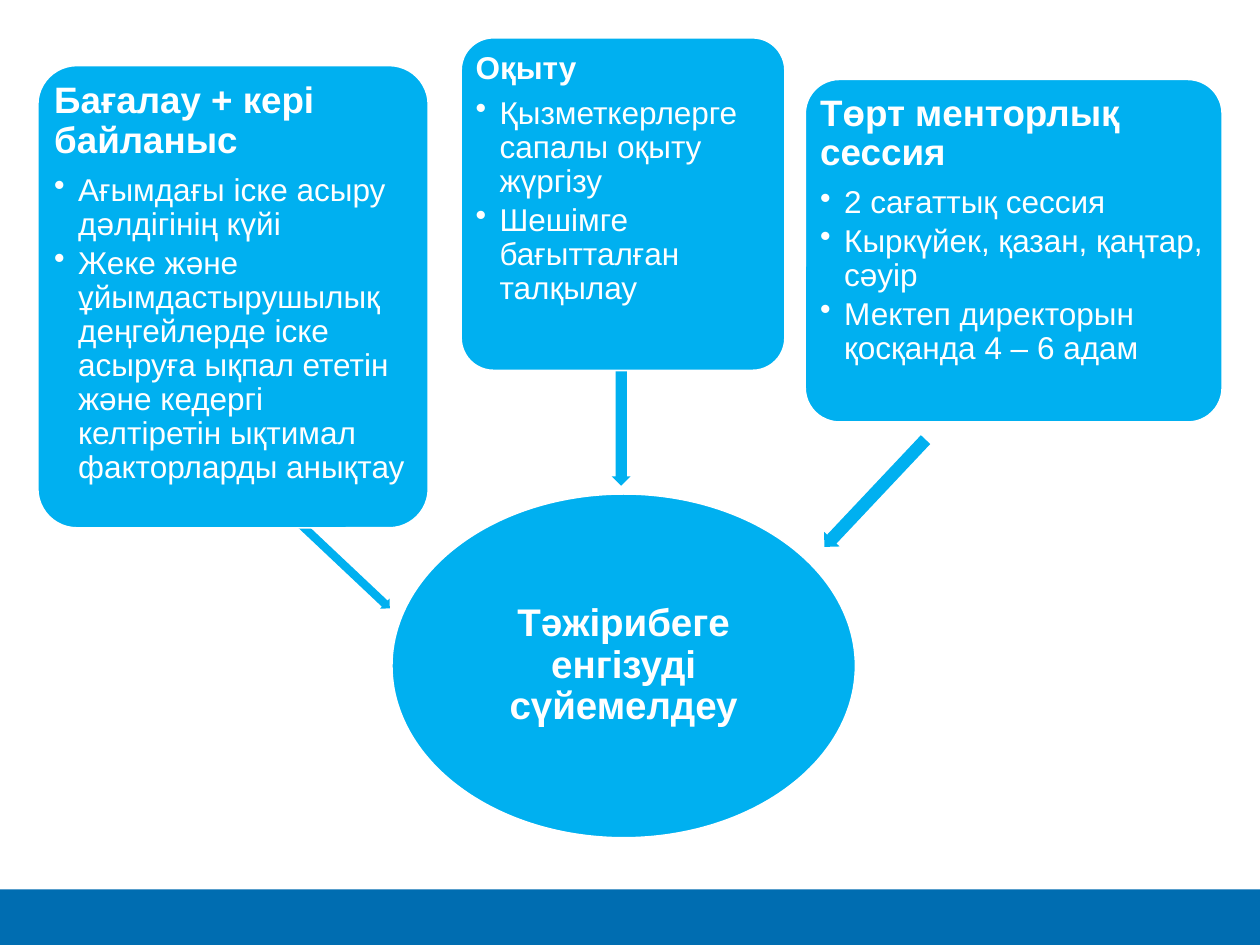
from typing import NamedTuple

from lxml.etree import SubElement
from pptx import Presentation
from pptx.dml.color import RGBColor
from pptx.enum.shapes import MSO_SHAPE
from pptx.enum.text import MSO_ANCHOR, PP_ALIGN
from pptx.oxml.ns import qn
from pptx.util import Inches, Pt

SKY = "00B0F0"
NAVY = "006DB1"
WHITE = "FFFFFF"
BULLET_SIZE = 18
BULLET_INDENT = Inches(0.19)


class Box(NamedTuple):
    left: float
    top: float
    width: float
    height: float


class Card(NamedTuple):
    box: Box
    heading: str
    heading_size: int
    bullets: list[str]


class Arrow(NamedTuple):
    box: Box
    rotation: float


CARDS = [
    Card(Box(0.3, 0.52, 3.1, 3.67), "Бағалау + кері байланыс", 21, [
        "Ағымдағы іске асыру дәлдігінің күйі",
        "Жеке және ұйымдастырушылық деңгейлерде іске асыруға ықпал ететін "
        "және кедергі келтіретін ықтимал факторларды анықтау",
    ]),
    Card(Box(3.66, 0.3, 2.57, 2.64), "Оқыту", 18, [
        "Қызметкерлерге сапалы оқыту жүргізу",
        "Шешімге бағытталған талқылау",
    ]),
    Card(Box(6.39, 0.63, 3.31, 2.72), "Төрт менторлық сессия", 21, [
        "2 сағаттық сессия",
        "Кыркүйек, қазан, қаңтар, сәуір",
        "Мектеп директорын қосқанда 4 – 6 адам",
    ]),
]
ARROWS = [
    Arrow(Box(2.23, 4.43, 1, 0.11), 223.3),
    Arrow(Box(4.32, 3.17, 1.22, 0.15), 270),
    Arrow(Box(6.36, 3.83, 1.17, 0.17), 313.3),
]


def color(value: str) -> RGBColor:
    return RGBColor.from_string(value)


def add_filled_shape(slide, kind, box: Box, fill: str, outline: str | None = None):
    shape = slide.shapes.add_shape(kind, *(Inches(length) for length in box))
    shape.shadow.inherit = False
    shape.fill.solid()
    shape.fill.fore_color.rgb = color(fill)
    if outline:
        shape.line.color.rgb = color(outline)
        shape.line.width = Pt(1)
    else:
        shape.line.fill.background()
    return shape


def set_up_frame(shape, margin: float, anchor):
    frame = shape.text_frame
    frame.word_wrap = True
    frame.vertical_anchor = anchor
    frame.margin_left = frame.margin_right = Inches(margin)
    frame.margin_top = frame.margin_bottom = Inches(margin)
    return frame


def format_paragraph(paragraph, size: int, bold: bool, space_share: float,
                     alignment=PP_ALIGN.LEFT) -> None:
    """Space after the paragraph is a share of its font size."""
    paragraph.alignment = alignment
    paragraph.line_spacing = 0.9
    paragraph.space_after = Pt(round(size * space_share, 1))
    for run in paragraph.runs:
        run.font.name = "Arial"
        run.font.size = Pt(size)
        run.font.bold = bold
        run.font.color.rgb = color(WHITE)


def add_bullet(paragraph) -> None:
    properties = paragraph._p.get_or_add_pPr()
    properties.set("marL", str(BULLET_INDENT))
    properties.set("indent", str(-BULLET_INDENT))
    SubElement(properties, qn("a:buChar"), char="•")


def add_card(slide, card: Card) -> None:
    shape = add_filled_shape(slide, MSO_SHAPE.ROUNDED_RECTANGLE, card.box, SKY, WHITE)
    shape.adjustments[0] = 0.1
    frame = set_up_frame(shape, 0.04, MSO_ANCHOR.TOP)
    frame.text = card.heading
    format_paragraph(frame.paragraphs[0], card.heading_size, True, 0.35)
    for bullet in card.bullets:
        paragraph = frame.add_paragraph()
        paragraph.text = bullet
        add_bullet(paragraph)
        format_paragraph(paragraph, BULLET_SIZE, False, 0.15)


def add_arrow(slide, arrow: Arrow) -> None:
    shape = add_filled_shape(slide, MSO_SHAPE.LEFT_ARROW, arrow.box, SKY)
    shape.adjustments[0] = 0.6
    shape.adjustments[1] = 0.5
    shape.rotation = arrow.rotation


def add_goal(slide) -> None:
    shape = add_filled_shape(slide, MSO_SHAPE.OVAL, Box(3.11, 3.92, 3.68, 2.73), SKY, WHITE)
    frame = set_up_frame(shape, 0.02, MSO_ANCHOR.MIDDLE)
    frame.text = "Тәжірибеге енгізуді сүйемелдеу"
    format_paragraph(frame.paragraphs[0], 22, True, 0.35, PP_ALIGN.CENTER)


def main() -> None:
    presentation = Presentation()
    presentation.slide_width = Inches(10)
    presentation.slide_height = Inches(7.5)
    slide = presentation.slides.add_slide(presentation.slide_layouts[6])
    add_filled_shape(slide, MSO_SHAPE.RECTANGLE, Box(0, 7.06, 10, 0.44), NAVY)
    add_goal(slide)
    for arrow, card in zip(ARROWS, CARDS):
        add_arrow(slide, arrow)
        add_card(slide, card)
    presentation.save("out.pptx")


if __name__ == "__main__":
    main()
